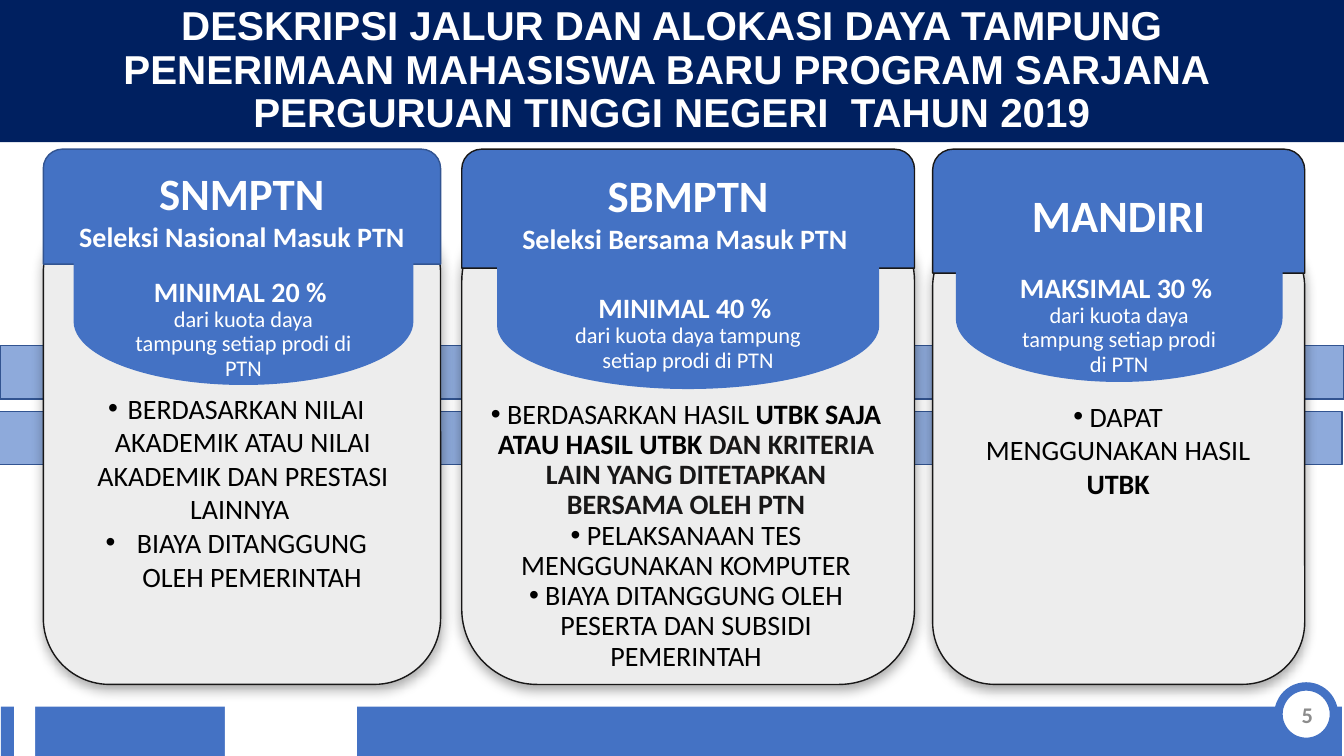
from dataclasses import dataclass

from lxml.etree import SubElement
from pptx import Presentation
from pptx.dml.color import RGBColor
from pptx.enum.shapes import MSO_SHAPE
from pptx.enum.text import MSO_ANCHOR, PP_ALIGN
from pptx.oxml.ns import qn
from pptx.util import Inches, Pt

COLORS = {
    "navy": "002060", "blue": "4472C4", "edge": "325491", "grey": "EDEDED",
    "ink": "181717", "black": "000000", "white": "FFFFFF", "number": "8C8C8C",
}
QUOTA = "dari kuota daya tampung setiap prodi di PTN"


@dataclass
class Span:
    text: str
    size: float = 20
    bold: bool = False
    color: str = "black"
    font: str = "Calibri"


@dataclass
class Item:
    spans: list[Span]
    hanging: float = 0


@dataclass
class Track:
    name: str
    subtitle: str
    left: float
    width: float
    body_top: float
    head_height: float
    head_edge: str
    pill_left: float
    pill_top: float
    pill_width: float
    share: str
    share_top: float
    list_at: tuple[float, float, float, float]
    list_spacing: float
    items: list[Item]


TRACKS = [
    Track("SNMPTN", "Seleksi Nasional Masuk PTN", 0.43, 3.94, 2.05, 1.14, "edge",
          0.73, 2.56, 3.37, "MINIMAL 20 %", 2.76, (0.73, 3.83, 3.23, 2.12), 1.0,
          [Item([Span(" BERDASARKAN NILAI AKADEMIK ATAU NILAI AKADEMIK DAN "
                      "PRESTASI LAINNYA ")], 0.13),
           Item([Span("BIAYA DITANGGUNG OLEH PEMERINTAH")], 0.31)]),
    Track("SBMPTN", "Seleksi Bersama Masuk PTN ", 4.58, 4.49, 2.04, 1.18, "ink",
          4.93, 2.6, 3.79, "MINIMAL 40 %", 2.92, (4.76, 3.92, 4.09, 2.83), 0.9,
          [Item([Span(" BERDASARKAN HASIL "),
                 Span("UTBK SAJA ATAU HASIL UTBK ", bold=True),
                 Span("DAN KRITERIA LAIN YANG DITETAPKAN BERSAMA OLEH PTN",
                      bold=True, color="ink")]),
           Item([Span(" PELAKSANAAN TES MENGGUNAKAN KOMPUTER")]),
           Item([Span(" BIAYA DITANGGUNG OLEH PESERTA DAN SUBSIDI PEMERINTAH")])]),
    Track("MANDIRI", "", 9.25, 3.69, 2.23, 1.23, "ink",
          9.48, 2.53, 3.24, "MAKSIMAL 30 %", 2.72, (9.6, 3.91, 2.98, 2.79), 1.0,
          [Item([Span(" DAPAT MENGGUNAKAN HASIL "), Span("UTBK", bold=True)])]),
]


def rgb(name: str) -> RGBColor:
    return RGBColor.from_string(COLORS[name])


def add_block(page, kind, left: float, top: float, width: float, height: float, *,
              fill: str, line: str | None = None, line_width: float = 1,
              opacity: int = 100):
    block = page.shapes.add_shape(
        kind, Inches(left), Inches(top), Inches(width), Inches(height))
    block.shadow.inherit = False
    block.fill.solid()
    block.fill.fore_color.rgb = rgb(fill)
    if opacity < 100:
        color = block.fill._xPr.find(f"{qn('a:solidFill')}/{qn('a:srgbClr')}")
        SubElement(color, qn("a:alpha"), val=str(opacity * 1000))
    if line:
        block.line.color.rgb = rgb(line)
        block.line.width = Pt(line_width)
    else:
        block.line.fill.background()
    return block


def add_soft_shadow(block) -> None:
    effects = block._element.spPr.find(qn("a:effectLst"))
    shadow = SubElement(effects, qn("a:outerShdw"), blurRad=str(Inches(0.12)),
                        dist=str(Inches(0.04)), dir="5400000")
    color = SubElement(shadow, qn("a:srgbClr"), val=COLORS["black"])
    SubElement(color, qn("a:alpha"), val="35000")


def write(box, items: list[Item], *, spacing: float = 1.0, bullets: bool = False,
          anchor=MSO_ANCHOR.MIDDLE, margin: float = 0.05) -> None:
    frame = box.text_frame
    frame.word_wrap = True
    frame.vertical_anchor = anchor
    frame.margin_top = frame.margin_bottom = Inches(margin)
    for index, item in enumerate(items):
        para = frame.add_paragraph() if index else frame.paragraphs[0]
        if bullets:
            props = para._p.get_or_add_pPr()
            props.set("marL", str(Inches(item.hanging)))
            props.set("indent", str(-Inches(item.hanging)))
            SubElement(props, qn("a:buFont"), typeface="Arial")
            SubElement(props, qn("a:buChar"), char="•")
        para.alignment = PP_ALIGN.CENTER
        para.line_spacing = spacing
        para.space_before = Pt(0)
        for span in item.spans:
            for number, text in enumerate(span.text.split("\n")):
                if number:
                    para.add_line_break()
                run = para.add_run()
                run.text = text
                run.font.name = span.font
                run.font.size = Pt(span.size)
                run.font.bold = span.bold
                run.font.color.rgb = rgb(span.color)


def add_text(page, left: float, top: float, width: float, height: float,
             items: list[Item], **layout) -> None:
    box = page.shapes.add_textbox(
        Inches(left), Inches(top), Inches(width), Inches(height))
    write(box, items, **layout)


def add_footer(page) -> None:
    add_block(page, MSO_SHAPE.RECTANGLE, 0.01, 7.01, 13.3, 0.49, fill="blue")
    for left, width in ((0.14, 0.21), (2.23, 1.31)):
        add_block(page, MSO_SHAPE.RECTANGLE, left, 6.91, width, 0.59, fill="white")
    add_block(page, MSO_SHAPE.FLOWCHART_CONNECTOR, 12.68, 6.81, 0.55, 0.55,
              fill="white", line="blue", line_width=6)
    add_text(page, 12.64, 6.84, 0.65, 0.49,
             [Item([Span("5", 16, True, "number")])])


def add_title(page) -> None:
    title = page.shapes.title
    title.left, title.top = Inches(0), Inches(0)
    title.width, title.height = Inches(13.33), Inches(1.41)
    title.fill.solid()
    title.fill.fore_color.rgb = rgb("navy")
    heading = ("DESKRIPSI JALUR DAN ALOKASI DAYA TAMPUNG\n"
               "PENERIMAAN MAHASISWA BARU PROGRAM SARJANA \n"
               "PERGURUAN TINGGI NEGERI  TAHUN 2019")
    write(title, [Item([Span(heading, 28.8, True, "white", "Arial")])], spacing=0.9)


def add_card(page, track: Track) -> None:
    body = add_block(page, MSO_SHAPE.ROUNDED_RECTANGLE, track.left, track.body_top,
                     track.width, 6.79 - track.body_top, fill="grey", line="ink")
    add_soft_shadow(body)
    head = add_block(page, MSO_SHAPE.ROUND_2_SAME_RECTANGLE, track.left, 1.48,
                     track.width, track.head_height, fill="blue",
                     line=track.head_edge)
    names = [Item([Span(track.name, 32, True, "white")])]
    if track.subtitle:
        names.append(Item([Span(track.subtitle, 20, True, "white")]))
    write(head, names)
    add_text(page, *track.list_at, track.items, spacing=track.list_spacing,
             bullets=True, anchor=MSO_ANCHOR.TOP)


def add_pill(page, track: Track) -> None:
    # The delay shape is turned so that its round side points down
    depth = 1.26
    center = track.pill_left + track.pill_width / 2
    pill = add_block(page, MSO_SHAPE.FLOWCHART_DELAY, center - depth / 2,
                     track.pill_top + (depth - track.pill_width) / 2,
                     depth, track.pill_width, fill="blue")
    pill.rotation = 90
    text_width = track.pill_width * 0.707
    add_text(page, center - text_width / 2, track.share_top, text_width, 1.0,
             [Item([Span(track.share + " ", 20, True, "white")]),
              Item([Span(QUOTA, 16, False, "white")])],
             spacing=0.9, anchor=MSO_ANCHOR.TOP, margin=0)


def main() -> None:
    deck = Presentation()
    deck.slide_width, deck.slide_height = Inches(13.33), Inches(7.5)
    page = deck.slides.add_slide(deck.slide_layouts[5])
    add_footer(page)
    add_title(page)
    # Bands behind the cards
    for left, top in ((-0.02, 4.08), (0, 3.43)):
        add_block(page, MSO_SHAPE.RECTANGLE, left, top, 13.33, 0.53,
                  fill="blue", line="edge", opacity=60)
    # One card per admission track
    for track in TRACKS:
        add_card(page, track)
        add_pill(page, track)
    deck.save("out.pptx")


if __name__ == "__main__":
    main()
